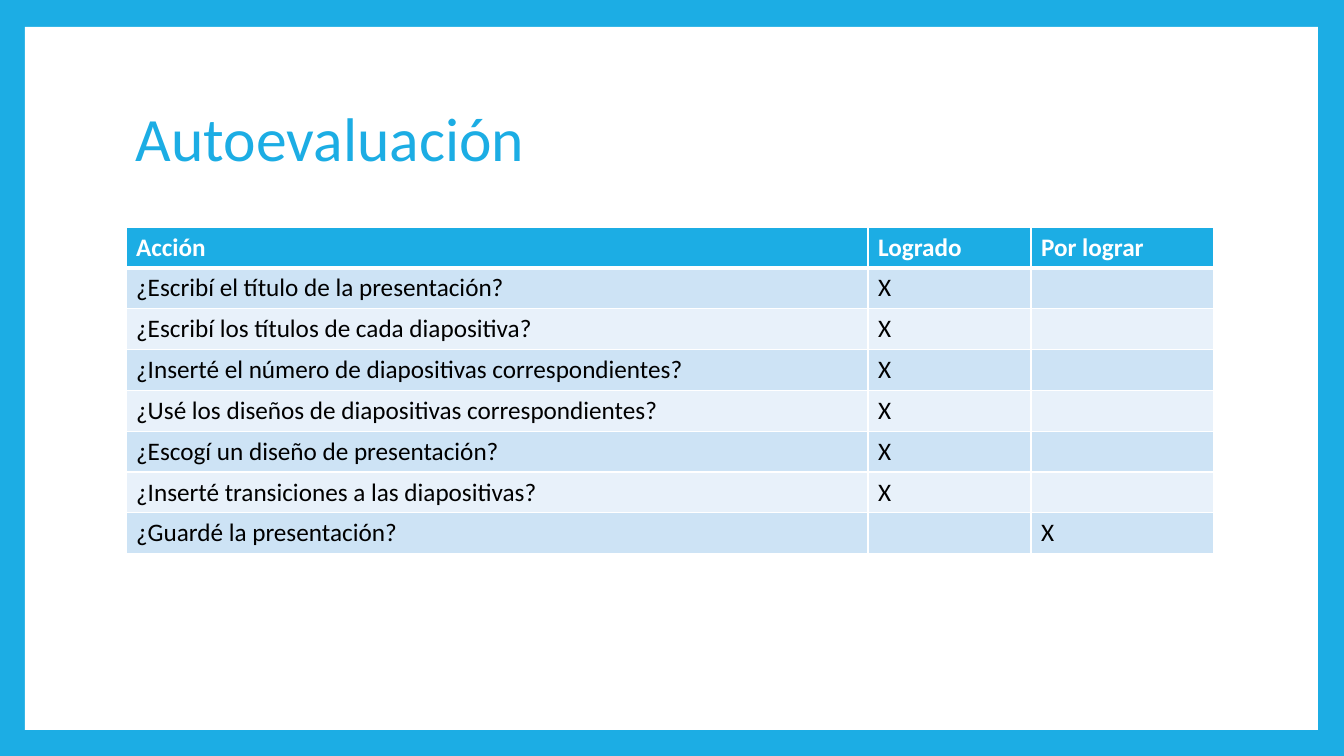
import pptx
import pptx.util
import pptx.dml.color
import pptx.enum.shapes
import pptx.enum.text
import pptx.oxml
import pptx.oxml.ns

THEME = {
    "blue": "1CADE4", "white": "FFFFFF", "black": "000000",
    "bands": ["CDE3F5", "E8F1FA"],
    "font": "Calibri", "title": 44, "body": 18,
    "thin": 1, "thick": 3,
}
WIDE, HIGH = 1344, 756
SCALE = 12192000 / WIDE
COLS = [742, 163, 183]
HEAD = ["Acción", "Logrado", "Por lograr"]
DONE = [
    "¿Escribí el título de la presentación?",
    "¿Escribí los títulos de cada diapositiva?",
    "¿Inserté el número de diapositivas correspondientes?",
    "¿Usé los diseños de diapositivas correspondientes?",
    "¿Escogí un diseño de presentación?",
    "¿Inserté transiciones a las diapositivas?",
]
TO_DO = ["¿Guardé la presentación?"]


def px(size):
    return round(size * SCALE)


def paint(fill, color):
    fill.solid()
    fill.fore_color.rgb = pptx.dml.color.RGBColor.from_string(color)


def apply(item, form):
    for name, value in form.items():
        setattr(item, name, value)


def write(frame, text, size, color, bold=False):
    run = frame.paragraphs[0].add_run()
    run.text = text
    apply(run.font, {"name": THEME["font"], "size": pptx.util.Pt(size), "bold": bold})
    paint(run.font.fill, color)


def add_panel(slide, box):
    kind = pptx.enum.shapes.MSO_SHAPE.RECTANGLE
    panel = slide.shapes.add_shape(kind, *map(px, box))
    panel.shadow.inherit = False
    paint(panel.fill, THEME["white"])
    panel.line.fill.background()


def add_title(slide, text, box):
    frame = slide.shapes.add_textbox(*map(px, box)).text_frame
    middle = pptx.enum.text.MSO_ANCHOR.MIDDLE
    apply(frame, {"word_wrap": True, "vertical_anchor": middle})
    frame.paragraphs[0].line_spacing = 0.9
    write(frame, text, THEME["title"], THEME["blue"])


def edge(cell, widths):
    """Draw the cell's borders; they must come before its fill in the XML."""
    props = cell._tc.get_or_add_tcPr()
    for spot, (side, width) in enumerate(widths.items()):
        line = pptx.oxml.parse_xml(
            f'<a:ln{side} {pptx.oxml.ns.nsdecls("a")} w="{pptx.util.Pt(width)}">'
            f'<a:solidFill><a:srgbClr val="{THEME["white"]}"/></a:solidFill>'
            f'</a:ln{side}>')
        props.insert(spot, line)


def add_grid(slide, rows, box):
    grid = slide.shapes.add_table(len(rows), len(COLS), *map(px, box)).table
    for col, width in zip(grid.columns, COLS):
        col.width = px(width)
    thin, thick = THEME["thin"], THEME["thick"]
    for r, row in enumerate(rows):
        head = r == 0
        fill = THEME["blue"] if head else THEME["bands"][(r - 1) % 2]
        color = THEME["white"] if head else THEME["black"]
        top = thick if r == 1 else thin
        base = thick if head else thin
        for c, text in enumerate(row):
            cell = grid.cell(r, c)
            paint(cell.fill, fill)
            edge(cell, {"L": thin, "R": thin, "T": top, "B": base})
            if text:
                write(cell.text_frame, text, THEME["body"], color, head)


def main():
    deck = pptx.Presentation()
    apply(deck, {"slide_width": px(WIDE), "slide_height": px(HIGH)})
    slide = deck.slides.add_slide(deck.slide_layouts[6])
    paint(slide.background.fill, THEME["blue"])
    add_panel(slide, (25, 27, 1293, 703))
    add_title(slide, "Autoevaluación", (126, 67, 1088, 149))
    rows = [HEAD] + [[ask, "X", ""] for ask in DONE] + [[ask, "", "X"] for ask in TO_DO]
    add_grid(slide, rows, (126, 227, sum(COLS), 327))
    deck.save("out.pptx")


if __name__ == "__main__":
    main()
